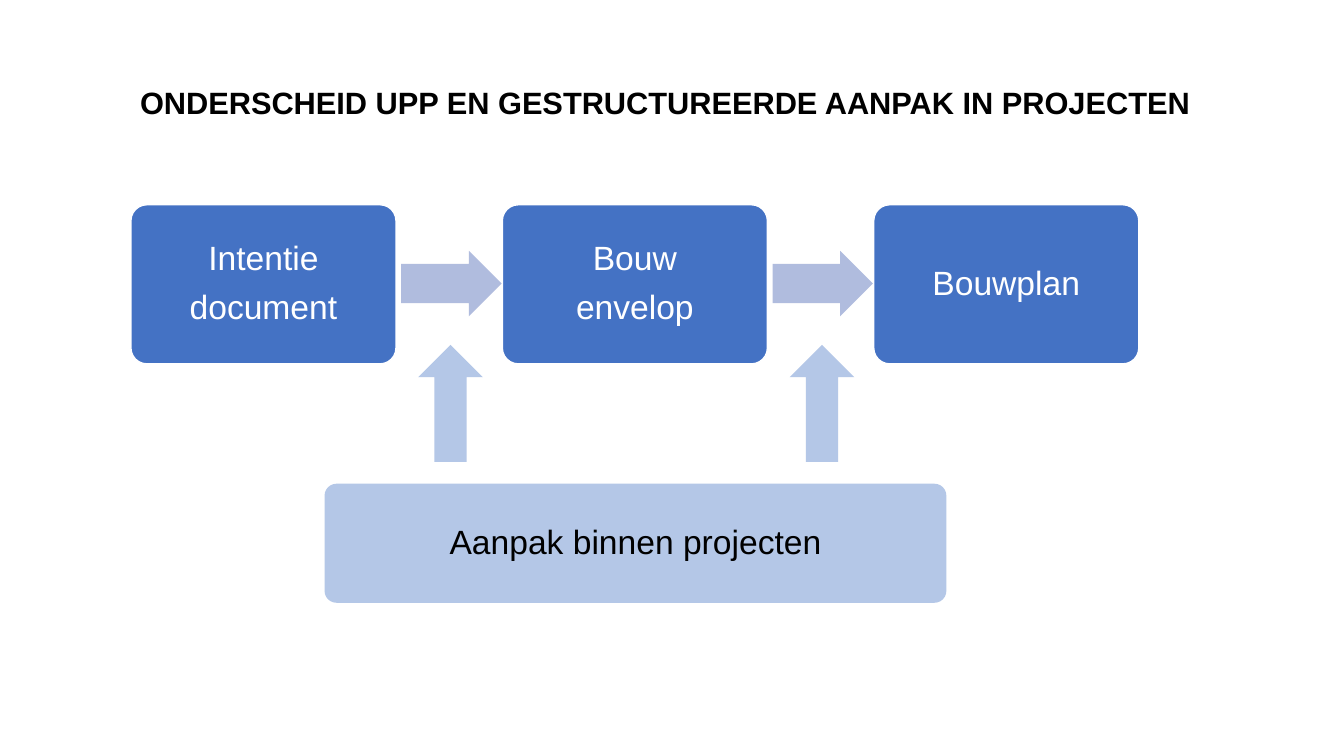
from pptx import Presentation
from pptx.dml.color import RGBColor
from pptx.enum.shapes import MSO_SHAPE
from pptx.enum.text import MSO_ANCHOR, PP_ALIGN
from pptx.util import Cm, Pt

ROUNDED = MSO_SHAPE.ROUNDED_RECTANGLE
RIGHT_ARROW = MSO_SHAPE.RIGHT_ARROW
UP_ARROW = MSO_SHAPE.UP_ARROW
MIDDLE = MSO_ANCHOR.MIDDLE
LEFT = PP_ALIGN.LEFT
CENTER = PP_ALIGN.CENTER

BLACK = RGBColor(0x00, 0x00, 0x00)
WHITE = RGBColor(0xFF, 0xFF, 0xFF)
BLUE = RGBColor(0x44, 0x72, 0xC4)
LAVENDER = RGBColor(0xB0, 0xBC, 0xDE)
LIGHT_BLUE = RGBColor(0xB4, 0xC7, 0xE7)

FONT = "Arial"
STEP = 9.36
STAGES = ["Intentie\ndocument", "Bouw\nenvelop", "Bouwplan"]


def write_text(shape, text, size, color, alignment, bold=False):
    """Fill a shape with text, one paragraph per line."""
    frame = shape.text_frame
    frame.word_wrap = True
    frame.vertical_anchor = MIDDLE
    frame.text = text
    for index, paragraph in enumerate(frame.paragraphs):
        paragraph.alignment = alignment
        paragraph.line_spacing = 0.9
        if index:
            paragraph.space_before = Pt(9)
        for run in paragraph.runs:
            run.font.name = FONT
            run.font.size = Pt(size)
            run.font.bold = bold
            run.font.color.rgb = color


def add_filled(slide, kind, left, top, width, height, fill, adjustments):
    """Add a flat preset shape without outline, measured in centimetres."""
    shape = slide.shapes.add_shape(kind, Cm(left), Cm(top), Cm(width), Cm(height))
    shape.shadow.inherit = False
    shape.fill.solid()
    shape.fill.fore_color.rgb = fill
    shape.line.fill.background()
    for index, value in enumerate(adjustments):
        shape.adjustments[index] = value
    return shape


def add_box(slide, left, top, width, height, fill, text, color):
    """Add a rounded box with centred text."""
    box = add_filled(slide, ROUNDED, left, top, width, height, fill, [0.1])
    write_text(box, text, 24, color, CENTER)
    return box


def add_title(slide, text):
    """Add the bold slide title."""
    title = slide.shapes.add_textbox(Cm(3.28), Cm(0.79), Cm(28.24), Cm(3.68))
    write_text(title, text, 22, BLACK, LEFT, bold=True)


def main():
    """Build the slide and save it."""
    presentation = Presentation()
    presentation.slide_width = Cm(33.87)
    presentation.slide_height = Cm(19.05)
    slide = presentation.slides.add_slide(presentation.slide_layouts[6])

    add_title(slide, "ONDERSCHEID UPP EN GESTRUCTUREERDE AANPAK IN PROJECTEN")
    for index, stage in enumerate(STAGES):
        box = add_box(slide, 3.3 + index * STEP, 5.16, 6.68, 4.01, BLUE, stage, WHITE)
        box.line.color.rgb = WHITE
        box.line.width = Pt(1)
    for index in range(len(STAGES) - 1):
        offset = index * STEP
        add_filled(slide, RIGHT_ARROW, 10.11 + offset, 6.32, 2.53, 1.65,
                   LAVENDER, [0.6, 0.5])
        add_filled(slide, UP_ARROW, 10.54 + offset, 8.69, 1.63, 2.95,
                   LIGHT_BLUE, [0.5, 0.5])
    add_box(slide, 8.18, 12.19, 15.67, 3, LIGHT_BLUE, "Aanpak binnen projecten", BLACK)

    presentation.save("out.pptx")


if __name__ == "__main__":
    main()
